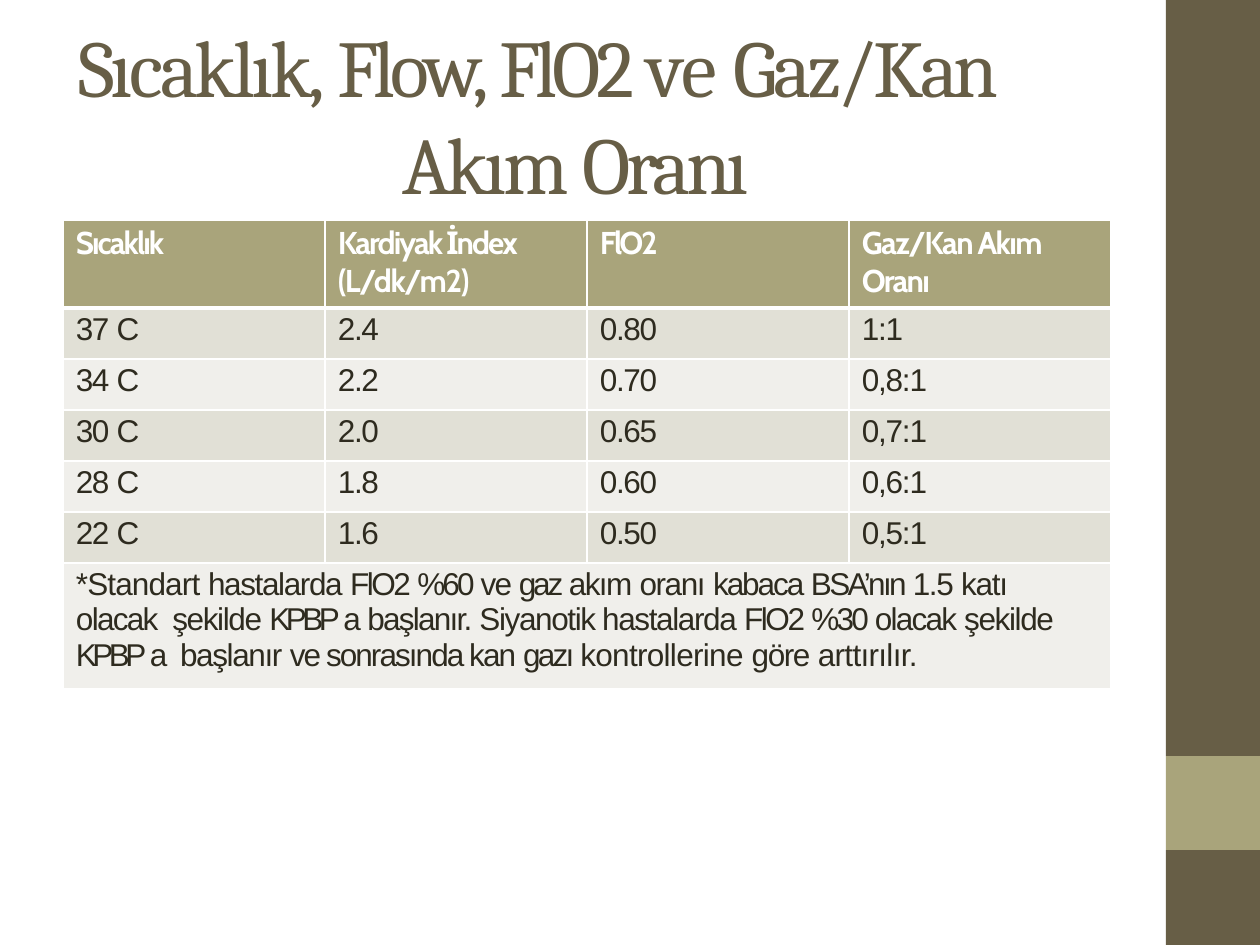
"""Build a slide with a table of temperature, flow, FlO2 and gas/blood flow ratio."""
from dataclasses import dataclass

from lxml import etree
from pptx import Presentation
from pptx.dml.color import RGBColor
from pptx.enum.shapes import MSO_SHAPE
from pptx.enum.text import MSO_ANCHOR, MSO_AUTO_SIZE, PP_ALIGN
from pptx.oxml.ns import qn
from pptx.util import Pt

RECT = MSO_SHAPE.RECTANGLE
TOP = MSO_ANCHOR.TOP
GROW = MSO_AUTO_SIZE.SHAPE_TO_FIT_TEXT
LEFT = PP_ALIGN.LEFT
SCALE = 914400 / 126
COLORS = {"brown": "675E46", "olive": "A9A47B", "ink": "2E2B1F", "white": "FFFFFF",
          "odd": "E1E0D6", "even": "F0EFEB"}

Run = tuple[str, float]


@dataclass
class Bar:
    top: int
    height: int
    color: str


@dataclass
class Style:
    font: dict
    color: str
    left: int
    indent: int = 0
    right: int = 0


TITLE = Style({"name": "Cambria", "size": Pt(46), "bold": False}, "brown", 325, -324, 40)
HEADER = Style({"name": "Cabin", "size": Pt(18), "bold": True}, "white", 13)
BODY = Style({"name": "Arial", "size": Pt(18), "bold": False}, "ink", 13)
NOTE = Style(BODY.font, "ink", 13, 0, 36)

BARS = [Bar(0, 756, "brown"), Bar(850, 95, "brown"), Bar(756, 94, "olive")]
TITLE_RUNS = [("Sıcaklık, ", -2), ("Flow, ", -2.5), ("FlO2 ", -2.8), ("ve ", -0.7),
              ("Gaz/Kan  Akım ", -2.2), ("Oranı", -2.4)]
HEADS = [
    [[("Sıcaklık", -1.1)]],
    [[("Kardiyak İndex", -1.1)], [("(L/dk/m2)", -0.8)]],
    [[("FlO2", -1.3)]],
    [[("Gaz/Kan Akım", -0.9)], [("Oranı", -1)]],
]
ROWS = [("37 ", "2.4", "0.80", "1:1"), ("34 ", "2.2", "0.70", "0,8:1"),
        ("30 ", "2.0", "0.65", "0,7:1"), ("28 ", "1.8", "0.60", "0,6:1"),
        ("22 ", "1.6", "0.50", "0,5:1")]
NOTE_RUNS = [
    ("*Standart ", -0.5), ("hastalarda ", -0.8), ("FlO2 ", -1.4), ("%60 ", -1.6),
    ("ve ", -1.1), ("gaz ", -1.8), ("akım ", -0.9), ("oranı ", -0.8), ("kabaca ", -1.2),
    ("BSA’nın ", -1.5), ("1.5 ", -0.8), ("katı ", -0.7), ("olacak  ", -1),
    ("şekilde ", -0.8), ("KPBP ", -2.6), ("a ", -1.4), ("başlanır. ", -1),
    ("Siyanotik hastalarda ", -0.8), ("FlO2 ", -1.4), ("%30 ", -1.6), ("olacak ", -1),
    ("şekilde ", -0.8), ("KPBP ", -2.6), ("a  ", -1.4), ("başlanır ", -0.8),
    ("ve sonrasında kan ", -1.1), ("gazı ", -1.6), ("kontrollerine ", -0.4),
    ("göre ", -0.8), ("arttırılır.", -0.4),
]
COL_W, HEAD_H, ROW_H, NOTE_H = 262, 88, 51, 126


def px(n: int) -> int:
    return round(n * SCALE)


def rgb(name: str) -> RGBColor:
    return RGBColor.from_string(COLORS[name])


def apply(obj, fmt: dict) -> None:
    for key, value in fmt.items():
        setattr(obj, key, value)


def write(tf, paragraphs: list[list[Run]], style: Style) -> None:
    for i, runs in enumerate(paragraphs):
        p = tf.add_paragraph() if i else tf.paragraphs[0]
        p.alignment = LEFT
        pPr = p._p.get_or_add_pPr()
        for key, n in (("marL", style.left), ("marR", style.right), ("indent", style.indent)):
            pPr.set(key, str(px(n)))
        for text, spacing in runs:
            r = p.add_run()
            r.text = text
            apply(r.font, style.font)
            r.font.color.rgb = rgb(style.color)
            r._r.get_or_add_rPr().set("spc", str(round(spacing * 100)))


def add_bar(slide, bar: Bar) -> None:
    sp = slide.shapes.add_shape(RECT, px(1166), px(bar.top), px(94), px(bar.height))
    sp.shadow.inherit = False
    sp.fill.solid()
    sp.fill.fore_color.rgb = rgb(bar.color)
    sp.line.fill.background()


def set_title(slide) -> None:
    sp = slide.shapes.title
    apply(sp, {"left": px(77), "top": px(16), "width": px(1106), "height": px(197)})
    tf = sp.text_frame
    apply(tf, {"margin_left": 0, "margin_right": 0, "margin_top": px(1), "margin_bottom": 0,
               "vertical_anchor": TOP, "word_wrap": True, "auto_size": GROW})
    write(tf, [TITLE_RUNS], TITLE)


def fill_cell(cell, paragraphs: list[list[Run]], style: Style, fill: str,
              top: int = 1, bottom: int = 1) -> None:
    apply(cell, {"margin_left": 0, "margin_right": 0, "margin_top": px(4),
                 "margin_bottom": 0, "vertical_anchor": TOP})
    tcPr = cell._tc.get_or_add_tcPr()
    for tag, width in (("a:lnL", 1), ("a:lnR", 1), ("a:lnT", top), ("a:lnB", bottom)):
        ln = etree.SubElement(tcPr, qn(tag), w=str(Pt(width)))
        solid = etree.SubElement(ln, qn("a:solidFill"))
        etree.SubElement(solid, qn("a:srgbClr"), val=COLORS["white"])
    cell.fill.solid()
    cell.fill.fore_color.rgb = rgb(fill)
    write(cell.text_frame, paragraphs, style)


def add_flow_table(slide) -> None:
    heights = [HEAD_H] + [ROW_H] * len(ROWS) + [NOTE_H]
    cols = len(HEADS)
    table = slide.shapes.add_table(len(heights), cols, px(63), px(220),
                                   px(COL_W * cols), px(sum(heights))).table
    apply(table, {"first_row": False, "horz_banding": False})
    for col in table.columns:
        col.width = px(COL_W)
    for row, height in zip(table.rows, heights):
        row.height = px(height)
    for c, paragraphs in enumerate(HEADS):
        fill_cell(table.cell(0, c), paragraphs, HEADER, "olive", bottom=3)
    for i, (degrees, index, oxygen, ratio) in enumerate(ROWS, 1):
        values = [[(degrees, -0.9), ("C", -3.5)], [(index, -0.8)],
                  [(oxygen, -0.8)], [(ratio, -0.7)]]
        for c, runs in enumerate(values):
            fill_cell(table.cell(i, c), [runs], BODY, "odd" if i % 2 else "even",
                      top=3 if i == 1 else 1)
    last = len(heights) - 1
    note = table.cell(last, 0)
    note.merge(table.cell(last, cols - 1))
    fill_cell(note, [NOTE_RUNS], NOTE, "even")


def main() -> None:
    prs = Presentation()
    apply(prs, {"slide_width": px(1260), "slide_height": px(945)})
    slide = prs.slides.add_slide(prs.slide_layouts[5])
    for bar in BARS:
        add_bar(slide, bar)
    set_title(slide)
    add_flow_table(slide)
    prs.save("out.pptx")


if __name__ == "__main__":
    main()
